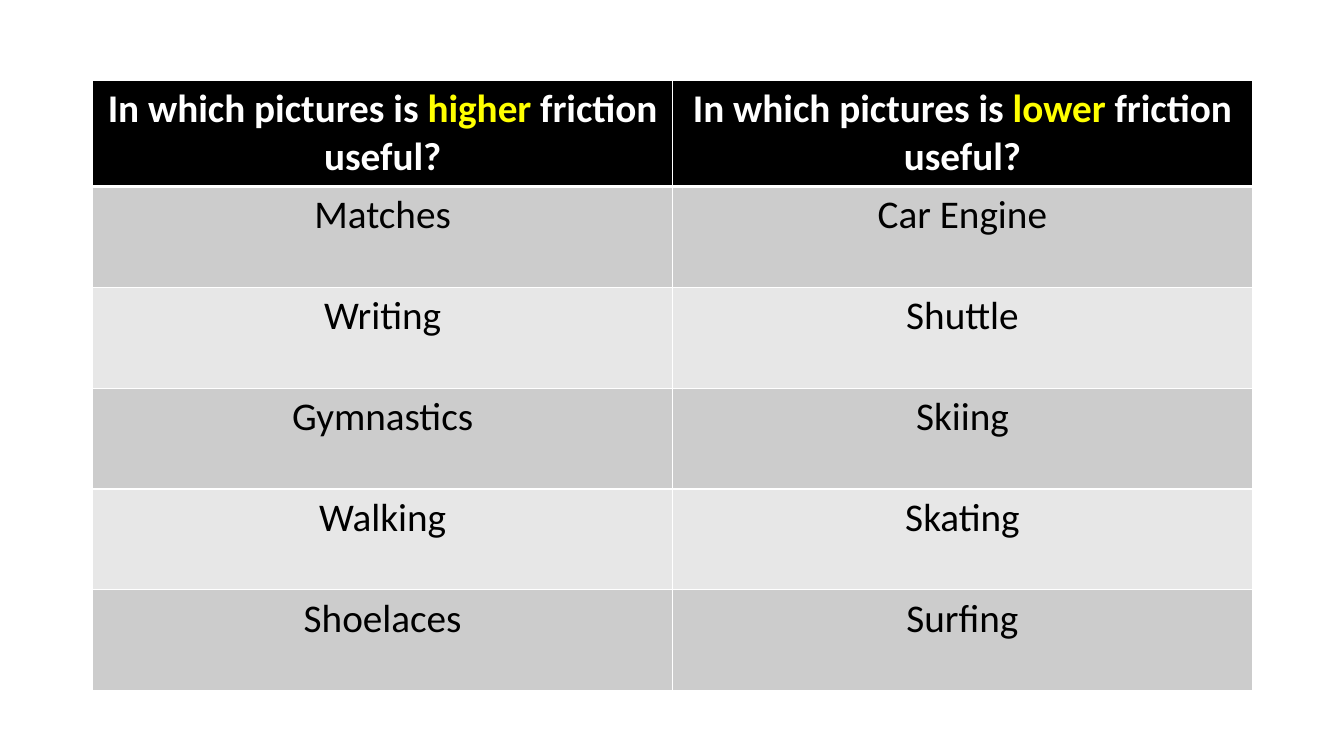
from lxml import etree
from pptx import Presentation
from pptx.dml.color import RGBColor
from pptx.enum.text import PP_ALIGN
from pptx.oxml.ns import qn
from pptx.util import Inches, Pt

COLOURS = {
    "header": "000000",
    "dark_band": "CCCCCC",
    "light_band": "E7E7E7",
    "border": "FFFFFF",
    "header_text": "FFFFFF",
    "highlight": "FFFF00",
    "body_text": "000000",
}
HEADINGS = [
    ("In which pictures is ", "higher", " friction useful?"),
    ("In which pictures is ", "lower", " friction useful?"),
]
EXAMPLES = [
    ("Matches", "Car Engine"),
    ("Writing", "Shuttle"),
    ("Gymnastics", "Skiing"),
    ("Walking", "Skating"),
    ("Shoelaces", "Surfing"),
]


def colour(name):
    return RGBColor.from_string(COLOURS[name])


def add_borders(cell, top, bottom):
    """Draw all four cell borders; top and bottom are widths in points."""
    properties = cell._tc.get_or_add_tcPr()
    for side, width in (("L", 1), ("R", 1), ("T", top), ("B", bottom)):
        line = etree.SubElement(properties, qn(f"a:ln{side}"), w=str(Pt(width)))
        fill = etree.SubElement(line, qn("a:solidFill"))
        etree.SubElement(fill, qn("a:srgbClr"), val=COLOURS["border"])


def fill_cell(cell, fill_name, spans, bold=False, top=1, bottom=1):
    """Style a cell and write its (text, colour name) spans."""
    add_borders(cell, top, bottom)
    cell.fill.solid()
    cell.fill.fore_color.rgb = colour(fill_name)
    para = cell.text_frame.paragraphs[0]
    para.alignment = PP_ALIGN.CENTER
    for text, colour_name in spans:
        span = para.add_run()
        span.text = text
        span.font.name = "Calibri"
        span.font.size = Pt(28)
        span.font.bold = bold
        span.font.color.rgb = colour(colour_name)


def add_friction_table(page):
    frame = page.shapes.add_table(
        len(EXAMPLES) + 1, len(HEADINGS),
        Inches(0.92), Inches(0.8), Inches(11.5), Inches(6.03))
    table = frame.table
    for column in table.columns:
        column.width = Inches(5.75)
    for row in table.rows:
        row.height = Inches(1)
    table.rows[0].height = Inches(1.03)

    span_colours = ("header_text", "highlight", "header_text")
    for column, heading in enumerate(HEADINGS):
        fill_cell(table.cell(0, column), "header",
                  zip(heading, span_colours), bold=True, bottom=3)
    for row, examples in enumerate(EXAMPLES, start=1):
        band = "dark_band" if row % 2 else "light_band"
        for column, example in enumerate(examples):
            fill_cell(table.cell(row, column), band,
                      [(example, "body_text")], top=3 if row == 1 else 1)


def main():
    deck = Presentation()
    deck.slide_width = Inches(13.33)
    deck.slide_height = Inches(7.5)
    page = deck.slides.add_slide(deck.slide_layouts.get_by_name("Blank"))
    add_friction_table(page)
    deck.save("out.pptx")


if __name__ == "__main__":
    main()
